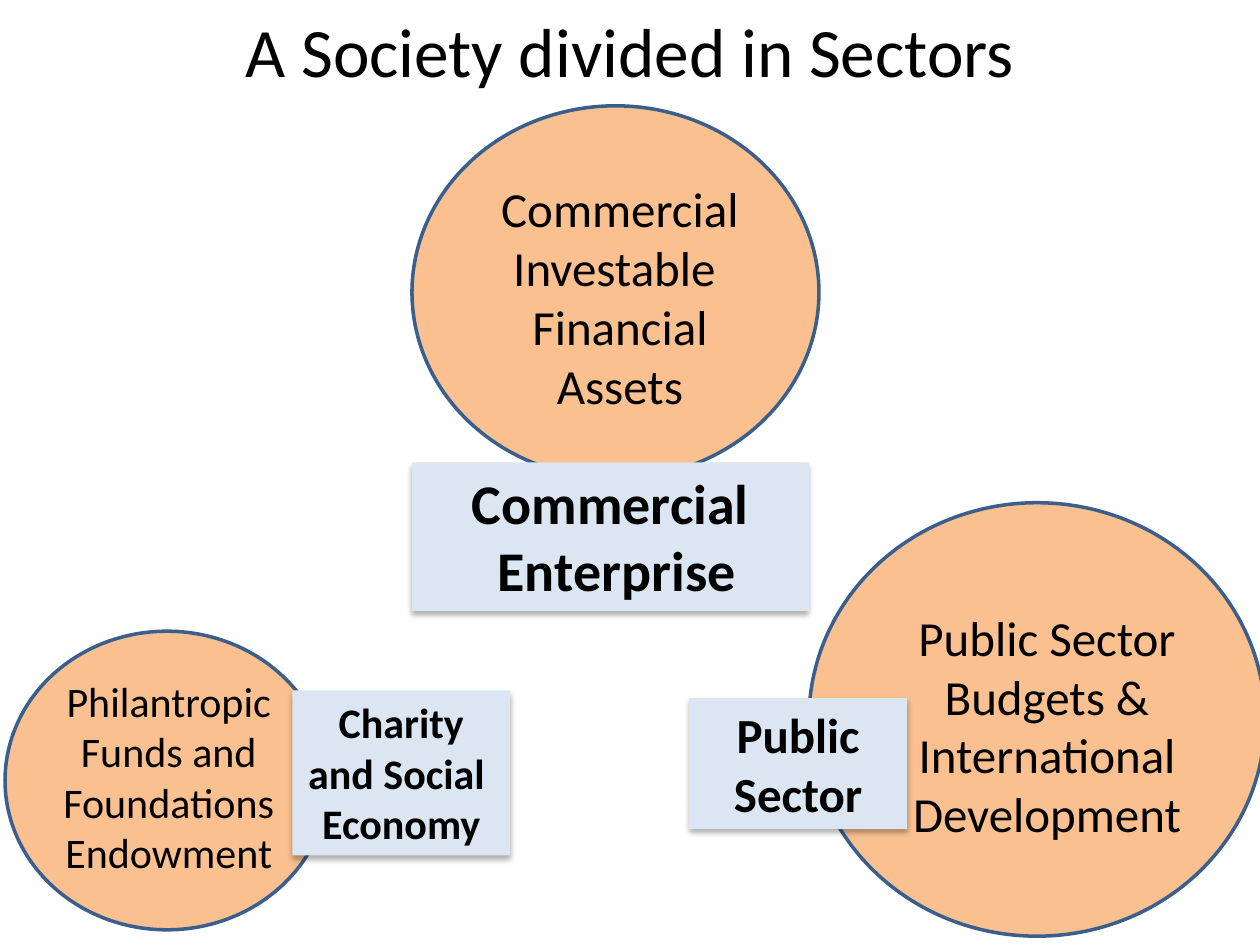
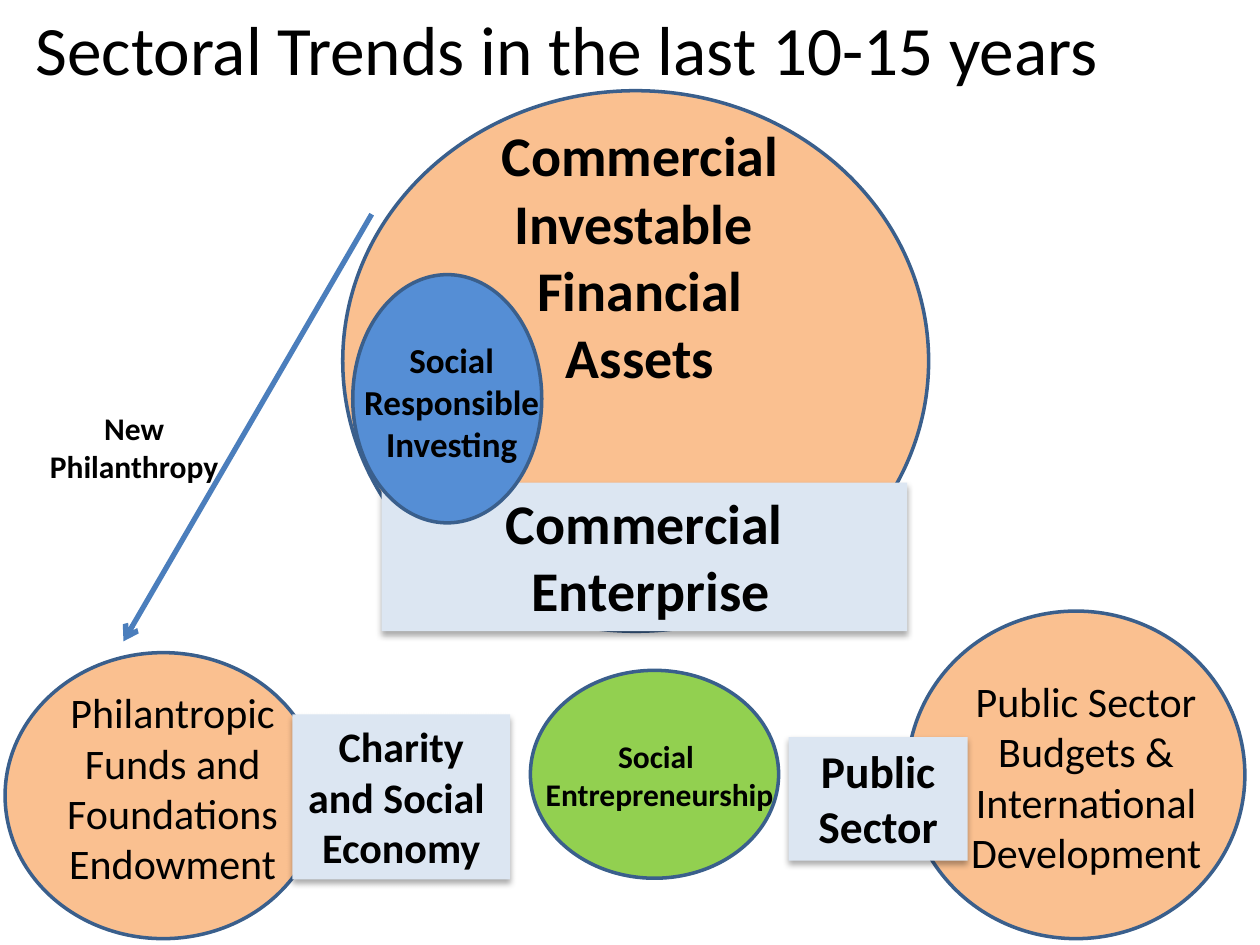
"""Build two slides on the sectors of society and their recent trends."""
import pptx
import pptx.dml.color
import pptx.enum.shapes
import pptx.enum.text
import pptx.oxml
import pptx.oxml.ns
import pptx.util

RGBColor = pptx.dml.color.RGBColor
BLACK = RGBColor(0x00, 0x00, 0x00)
PEACH = RGBColor(0xFA, 0xC0, 0x90)
PALE_BLUE = RGBColor(0xDC, 0xE6, 0xF2)
BLUE = RGBColor(0x55, 0x8E, 0xD5)
GREEN = RGBColor(0x92, 0xD0, 0x50)
OUTLINE = RGBColor(0x3A, 0x5F, 0x8C)
ARROW = RGBColor(0x4B, 0x7E, 0xBC)

COMMERCIAL_ASSETS = ("Commercial Investable ", "Financial Assets")
PHILANTHROPIC_FUNDS = ("Philantropic Funds and Foundations Endowment",)
PUBLIC_BUDGETS = ("Public Sector Budgets & International Development",)
CHARITY = ("Charity and Social ", "Economy")
PUBLIC_SECTOR = ("Public", "Sector")
ENTERPRISE = ("Commercial", " Enterprise")


class SectorDeck:
    """Hold the shared style and the slide being drawn, at 100 px to the inch."""

    font_name = "Calibri"
    emu_per_px = 9144
    shape_types = pptx.enum.shapes.MSO_SHAPE

    def __init__(self):
        self.presentation = pptx.Presentation()
        self.presentation.slide_width = self.px(1000)
        self.presentation.slide_height = self.px(750)
        self.slide = None

    def px(self, length):
        return pptx.util.Emu(length * self.emu_per_px)

    def box(self, *lengths):
        return [self.px(length) for length in lengths]

    def add_slide(self, title, left, top):
        self.slide = self.presentation.slides.add_slide(self.presentation.slide_layouts[6])
        frame = self.text((left, top, 900, 69), (title,), 39.6).text_frame
        frame.auto_size = pptx.enum.text.MSO_AUTO_SIZE.NONE
        frame.vertical_anchor = pptx.enum.text.MSO_ANCHOR.MIDDLE

    def add_lines(self, shape, lines, size, bold):
        frame = shape.text_frame
        frame.word_wrap = True
        frame.auto_size = pptx.enum.text.MSO_AUTO_SIZE.SHAPE_TO_FIT_TEXT
        frame.vertical_anchor = pptx.enum.text.MSO_ANCHOR.TOP
        for index, line in enumerate(lines):
            paragraph = frame.add_paragraph() if index else frame.paragraphs[0]
            paragraph.alignment = pptx.enum.text.PP_ALIGN.CENTER
            run = paragraph.add_run()
            run.text = line
            run.font.name = self.font_name
            run.font.size = pptx.util.Pt(size)
            run.font.bold = bold
            run.font.color.rgb = BLACK

    def text(self, bounds, lines, size, bold=False):
        shape = self.slide.shapes.add_textbox(*self.box(*bounds))
        self.add_lines(shape, lines, size, bold)
        return shape

    def filled(self, shape_type, bounds, fill):
        shape = self.slide.shapes.add_shape(shape_type, *self.box(*bounds))
        shape.shadow.inherit = False
        shape.fill.solid()
        shape.fill.fore_color.rgb = fill
        return shape

    def circle(self, bounds, fill=PEACH):
        shape = self.filled(self.shape_types.OVAL, bounds, fill)
        shape.line.color.rgb = OUTLINE
        shape.line.width = pptx.util.Pt(2)

    def label(self, bounds, lines, size):
        shape = self.filled(self.shape_types.RECTANGLE, bounds, PALE_BLUE)
        shape.line.fill.background()
        self.add_lines(shape, lines, size, True)
        effects = shape._element.spPr.find(pptx.oxml.ns.qn("a:effectLst"))
        effects.append(pptx.oxml.parse_xml(
            f'<a:outerShdw {pptx.oxml.ns.nsdecls("a")} blurRad="{pptx.util.Pt(3.5)}" '
            f'dist="{pptx.util.Pt(2.2)}" dir="5400000" rotWithShape="0">'
            '<a:srgbClr val="000000"><a:alpha val="32000"/></a:srgbClr></a:outerShdw>'))

    def arrow(self, start, end):
        connector = self.slide.shapes.add_connector(
            pptx.enum.shapes.MSO_CONNECTOR.STRAIGHT, *self.box(*start, *end))
        connector.line.color.rgb = ARROW
        connector.line.width = pptx.util.Pt(3)
        namespace = pptx.oxml.ns.nsdecls("a")
        properties = connector._element.spPr
        properties.find(pptx.oxml.ns.qn("a:ln")).append(
            pptx.oxml.parse_xml(f'<a:tailEnd {namespace} type="arrow"/>'))
        properties.append(pptx.oxml.parse_xml(f"<a:effectLst {namespace}/>"))


def draw_divided_society(deck):
    deck.add_slide("A Society divided in Sectors", 50, 5)
    deck.circle((327, 84, 323, 296))
    deck.text((374, 137, 236, 199), COMMERCIAL_ASSETS, 28)
    deck.circle((4, 501, 257, 237))
    deck.text((16, 531, 236, 172), PHILANTHROPIC_FUNDS, 24)
    deck.circle((642, 399, 362, 344))
    deck.text((713, 477, 236, 199), PUBLIC_BUDGETS, 28)
    deck.label((232, 548, 173, 131), CHARITY, 24)
    deck.label((547, 554, 173, 104), PUBLIC_SECTOR, 28)
    deck.label((327, 367, 315, 118), ENTERPRISE, 32)


def draw_sectoral_trends(deck):
    deck.add_slide("Sectoral Trends in the last 10-15 years", 0, 3)
    deck.circle((272, 72, 465, 429))
    deck.text((382, 91, 252, 226), COMMERCIAL_ASSETS, 32, True)
    deck.circle((4, 518, 251, 227))
    deck.text((19, 540, 236, 172), PHILANTHROPIC_FUNDS, 24)
    deck.circle((720, 485, 268, 260))
    deck.text((744, 531, 236, 178), PUBLIC_BUDGETS, 24)
    deck.label((232, 567, 173, 131), CHARITY, 24)
    deck.label((626, 585, 142, 98), PUBLIC_SECTOR, 26)
    deck.label((303, 383, 417, 118), ENTERPRISE, 32)
    deck.circle((280, 218, 150, 197), BLUE)
    deck.text((272, 264, 173, 111), ("Social Responsible Investing",), 20, True)
    deck.arrow((295, 170), (98, 509))
    deck.circle((421, 532, 197, 165), GREEN)
    deck.text((421, 580, 205, 71), ("Social ", "Entrepreneurship "), 18, True)
    deck.text((28, 320, 157, 71), ("New Philanthropy",), 18, True)


def main():
    deck = SectorDeck()
    draw_divided_society(deck)
    draw_sectoral_trends(deck)
    deck.presentation.save("out.pptx")


if __name__ == "__main__":
    main()
